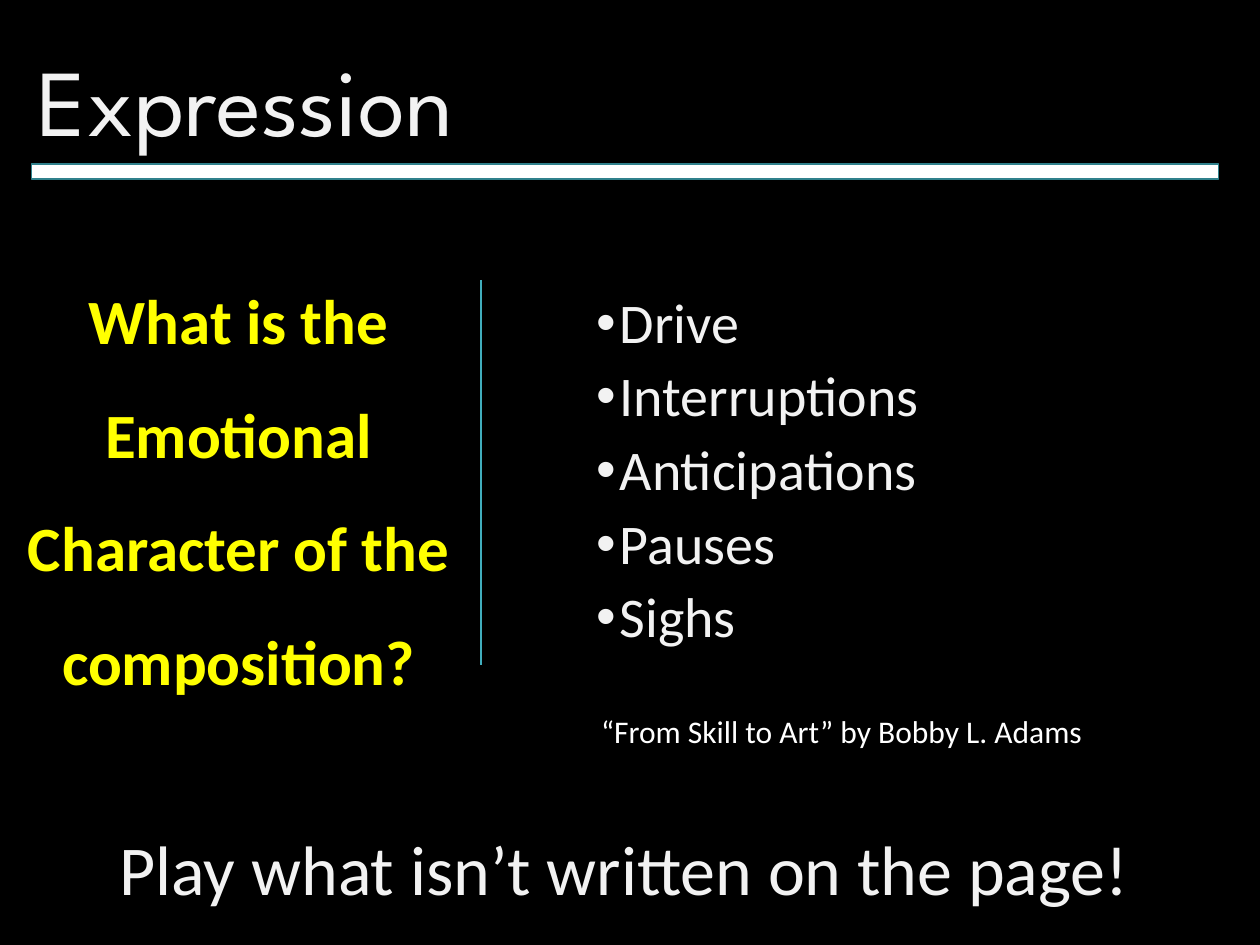
from lxml import etree
from pptx import Presentation
from pptx import util as u
from pptx.dml.color import RGBColor
from pptx.enum import shapes, text
from pptx.oxml.ns import qn

Pt = u.Pt
LIGHT, WHITE, YELLOW = "F2F2F2", "FFFFFF", "FFFF00"
TEAL, DARK_TEAL = "41AEBD", "30818C"


def rgb(value):
    return RGBColor.from_string(value)


def set_attrs(obj, formats):
    for name, value in formats.items():
        setattr(obj, name, value)


def place(sp, box):
    sp.left, sp.top, sp.width, sp.height = (Pt(v) for v in box)


def write(sp, lines, font, color, para=None, frame=None):
    """Fill a shape's text frame with one paragraph per line."""
    tf = sp.text_frame
    set_attrs(tf, {"word_wrap": True, "auto_size": text.MSO_AUTO_SIZE.NONE,
                   **(frame or {})})
    for i, line in enumerate(lines):
        p = tf.paragraphs[0] if i == 0 else tf.add_paragraph()
        set_attrs(p, para or {})
        r = p.add_run()
        r.text = line
        set_attrs(r.font, {"name": "Calibri", **font})
        r.font.color.rgb = rgb(color)
    return tf


def add_text(s, box, line, font, color, para=None, frame=None):
    sp = s.shapes.add_textbox(*(Pt(v) for v in box))
    write(sp, [line], font, color, para, frame)


def add_header(s, box):
    # Title
    x, y, w, h = box
    place(s.shapes.title, box)
    write(s.shapes.title, ["Expression"],
          {"name": "League Spartan", "size": Pt(54)}, LIGHT,
          {"alignment": text.PP_ALIGN.LEFT, "line_spacing": 0.9},
          {"vertical_anchor": text.MSO_ANCHOR.MIDDLE})
    # Rule under the title
    rule = s.shapes.add_shape(shapes.MSO_SHAPE.RECTANGLE, Pt(x + 3.6),
                              Pt(y + 80.6), Pt(w - 11.5), Pt(8.6))
    rule.shadow.inherit = False
    rule.fill.solid()
    rule.fill.fore_color.rgb = rgb(WHITE)
    rule.line.color.rgb = rgb(DARK_TEAL)
    rule.line.width = Pt(1)


def add_question(s, box):
    # Question
    x, y, w, h = box
    add_text(s, box, "What is the Emotional Character of the composition?",
             {"size": Pt(36), "bold": True}, YELLOW,
             {"alignment": text.PP_ALIGN.CENTER, "line_spacing": 1.5})
    # Divider on its right edge
    line = s.shapes.add_connector(shapes.MSO_CONNECTOR.STRAIGHT, Pt(x + w),
                                  Pt(y + 24), Pt(x + w), Pt(y + 244))
    line.line.color.rgb = rgb(TEAL)
    line.line.width = Pt(1)
    etree.SubElement(line._element.spPr, qn("a:effectLst"))


def add_devices(s, box):
    # Bulleted list
    x, y, w, h = box
    body = s.placeholders[1]
    place(body, box)
    tf = write(body, ["Drive", "Interruptions", "Anticipations", "Pauses", "Sighs"],
               {"size": Pt(32)}, LIGHT,
               {"line_spacing": 0.9, "space_before": Pt(7.5)},
               {"vertical_anchor": text.MSO_ANCHOR.MIDDLE})
    for p in tf.paragraphs:
        pPr = p._p.get_or_add_pPr()
        pPr.set("marL", str(Pt(13.5)))
        pPr.set("indent", str(-Pt(13.5)))
        etree.SubElement(pPr, qn("a:buFont")).set("typeface", "Arial")
        etree.SubElement(pPr, qn("a:buChar")).set("char", "•")
    # Source of the list
    add_text(s, (x + 3, y + h + 7.2, 297.4, 29), "“From Skill to Art” by Bobby L. Adams",
             {"size": Pt(18)}, WHITE, frame={"word_wrap": False})


def add_closing(s, box):
    # Closing line
    add_text(s, box, "Play what isn’t written on the page!", {"size": Pt(40)},
             LIGHT, {"alignment": text.PP_ALIGN.CENTER})


def main():
    prs = Presentation()
    prs.slide_width, prs.slide_height = Pt(720), Pt(540)
    s = prs.slides.add_slide(prs.slide_layouts[1])
    s.background.fill.solid()
    s.background.fill.fore_color.rgb = rgb("000000")
    add_header(s, (14.4, 13, 689.8, 95))
    add_question(s, (-2.2, 136, 277.2, 269.3))
    add_devices(s, (333.4, 144, 372.2, 252))
    add_closing(s, (5, 468, 703.4, 77.8))
    prs.save("out.pptx")


if __name__ == "__main__":
    main()
